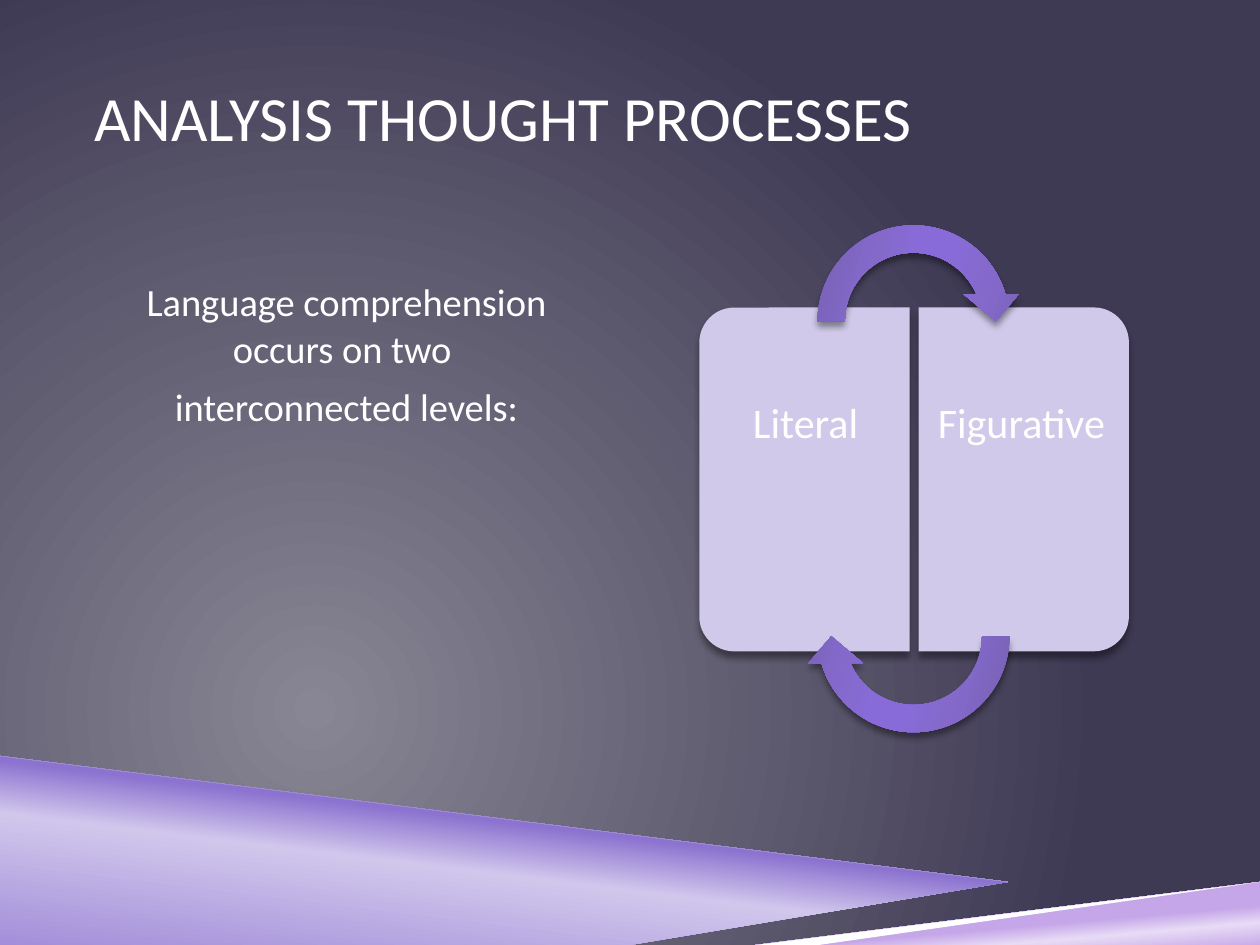
"""Build the slide on literal and figurative levels of language comprehension."""
from dataclasses import dataclass
from typing import Any

import pptx
import pptx.dml.color
import pptx.enum.shapes
import pptx.enum.text
import pptx.oxml
import pptx.oxml.ns
import pptx.util
from lxml import etree

Inches = pptx.util.Inches
Pt = pptx.util.Pt
RGBColor = pptx.dml.color.RGBColor
Shapes = pptx.enum.shapes.MSO_SHAPE
Align = pptx.enum.text.PP_ALIGN
Anchor = pptx.enum.text.MSO_ANCHOR
qn = pptx.oxml.ns.qn

WHITE = RGBColor(0xFF, 0xFF, 0xFF)
BLACK = RGBColor(0x00, 0x00, 0x00)
LAVENDER = RGBColor(0xD0, 0xC9, 0xE9)
GREY = RGBColor(0x88, 0x86, 0x94)
NIGHT = RGBColor(0x3F, 0x3A, 0x54)
ORCHID = RGBColor(0xC5, 0xA6, 0xE8)
PALE_ORCHID = RGBColor(0xE8, 0xDB, 0xF6)
VIOLET = RGBColor(0x8C, 0x73, 0xD0)
PALE_VIOLET = RGBColor(0xD1, 0xC7, 0xEC)
ARROW_DARK = RGBColor(0x73, 0x5E, 0xAA)
ARROW_MID = RGBColor(0x84, 0x69, 0xCB)
ARROW_LIGHT = RGBColor(0x88, 0x6B, 0xD8)

Stops = tuple[tuple[int, RGBColor], ...]
Points = tuple[tuple[float, float], ...]

ARROW_STOPS: Stops = (
    (0, ARROW_DARK), (30, ARROW_MID), (45, ARROW_LIGHT),
    (55, ARROW_LIGHT), (73, ARROW_MID), (100, ARROW_DARK),
)
ARROW_ADJUSTMENTS = (0.125, 11.42, 204.58, 108, 0.125)
PANEL_ADJUSTMENTS = (0.167, 0)


@dataclass(frozen=True)
class Band:
    points: Points
    stops: Stops = ()
    angle: int = 0


@dataclass(frozen=True)
class Panel:
    label: str
    left: float
    rotation: int
    label_left: float
    insets: tuple[float, float]


@dataclass(frozen=True)
class Arrow:
    top: float
    rotation: int


BANDS = (
    Band(((1.98, 7.5), (10, 6.72), (10, 7.5)),
         ((28, ORCHID), (40, PALE_ORCHID), (48, ORCHID)), 265),
    Band(((0, 5.97), (7.92, 6.92), (2, 7.5), (0, 7.5)),
         ((0, VIOLET), (52, PALE_VIOLET), (66, VIOLET)), 277),
    Band(((0, 5.92), (0, 6), (7.9, 6.93), (8.32, 6.9))),
    Band(((10, 6.69), (1.84, 7.5), (2.66, 7.5), (10, 6.77))),
)
PANELS = (
    Panel("Literal", 5.02, 270, 5.63, (0.1, 0.15)),
    Panel("Figurative", 6.76, 90, 7.29, (0.15, 0.1)),
)
ARROWS = (Arrow(1.68, 0), Arrow(4.18, 180))


def apply_format(target: Any, values: dict[str, Any]) -> None:
    for name, value in values.items():
        setattr(target, name, value)


def add_element(parent: Any, tag: str, **attributes: Any) -> Any:
    texts = {name: str(value) for name, value in attributes.items()}
    return etree.SubElement(parent, qn(tag), texts)


def paint_gradient(fill: Any, owner: Any, stops: Stops, angle: int | None = None) -> None:
    fill.gradient()
    gradient = owner.find(".//" + qn("a:gradFill"))
    gradient.clear()
    gradient.set("rotWithShape", "1")
    stop_list = add_element(gradient, "a:gsLst")
    for position, color in stops:
        stop = add_element(stop_list, "a:gs", pos=position * 1000)
        add_element(stop, "a:srgbClr", val=color)
    if angle is None:
        circle = add_element(gradient, "a:path", path="circle")
        add_element(circle, "a:fillToRect", l=50000, t=100000, r=100000, b=50000)
    else:
        add_element(gradient, "a:lin", ang=angle * 60000, scaled=0)


def paint_solid(shape: Any, color: RGBColor) -> None:
    shape.fill.solid()
    shape.fill.fore_color.rgb = color


def add_shadow(shape: Any) -> None:
    effects = shape._element.spPr.find(qn("a:effectLst"))
    shadow = add_element(effects, "a:outerShdw", blurRad=Pt(4), dist=Pt(3.3),
                         dir=90 * 60000, rotWithShape=0)
    color = add_element(shadow, "a:srgbClr", val=BLACK)
    add_element(color, "a:alpha", val=40000)


def place(box: Any, left: float, top: float, width: float, height: float) -> None:
    apply_format(box, {"left": Inches(left), "top": Inches(top),
                       "width": Inches(width), "height": Inches(height)})


def write_text(box: Any, lines: tuple[str, ...], size: int,
               insets: tuple[float, float, float, float],
               anchor: Any, paragraph_format: dict[str, Any], gap: float = 0) -> None:
    frame = box.text_frame
    left, top, right, bottom = insets
    apply_format(frame, {
        "word_wrap": True, "auto_size": pptx.enum.text.MSO_AUTO_SIZE.NONE,
        "vertical_anchor": anchor,
        "margin_left": Inches(left), "margin_top": Inches(top),
        "margin_right": Inches(right), "margin_bottom": Inches(bottom),
    })
    for index, line in enumerate(lines):
        para = frame.add_paragraph() if index else frame.paragraphs[0]
        properties = para._p.get_or_add_pPr()
        apply_format(para, {"space_before": Pt(gap if index else 0), **paragraph_format})
        properties.set("marL", "0")
        properties.set("indent", "0")
        add_element(properties, "a:buNone")
        span = para.add_run()
        span.text = line
        apply_format(span.font, {"name": "Calibri", "size": Pt(size)})
        span.font.color.rgb = WHITE


def draw_band(page: Any, band: Band) -> None:
    builder = page.shapes.build_freeform(*band.points[0], scale=Inches(1))
    builder.add_line_segments(band.points[1:], close=True)
    shape = builder.convert_to_shape()
    shape.shadow.inherit = False
    shape.line.fill.background()
    if band.stops:
        paint_gradient(shape.fill, shape._element, band.stops, band.angle)
    else:
        paint_solid(shape, WHITE)


def draw_preset(group: Any, kind: Any, left: float, top: float, width: float,
                height: float, rotation: int, adjustments: tuple[float, ...]) -> Any:
    shape = group.shapes.add_shape(
        kind, Inches(left), Inches(top), Inches(width), Inches(height))
    shape.rotation = rotation
    for index, value in enumerate(adjustments):
        shape.adjustments[index] = value
    shape.line.fill.background()
    shape.shadow.inherit = False
    add_shadow(shape)
    return shape


def draw_panel(group: Any, panel: Panel) -> None:
    shape = draw_preset(group, Shapes.ROUND_2_SAME_RECTANGLE, panel.left, 2.97,
                        2.73, 1.67, panel.rotation, PANEL_ADJUSTMENTS)
    paint_solid(shape, LAVENDER)
    label = group.shapes.add_textbox(
        Inches(panel.label_left), Inches(2.52), Inches(1.58), Inches(2.56))
    left, right = panel.insets
    write_text(label, (panel.label,), 24, (left, 0.67, right, 0.17), Anchor.TOP,
               {"alignment": Align.CENTER, "line_spacing": 0.9})


def draw_arrow(group: Any, arrow: Arrow) -> None:
    shape = draw_preset(group, Shapes.CIRCULAR_ARROW, 6.38, arrow.top, 1.74, 1.74,
                        arrow.rotation, ARROW_ADJUSTMENTS)
    paint_gradient(shape.fill, shape._element, ARROW_STOPS, 16)


def main() -> None:
    deck = pptx.Presentation()
    apply_format(deck, {"slide_width": Inches(10), "slide_height": Inches(7.5)})
    page = deck.slides.add_slide(deck.slide_layouts[1])
    paint_gradient(page.background.fill, page._element, ((0, GREY), (100, NIGHT)))
    for band in BANDS:
        draw_band(page, band)
    title, body = page.shapes.title, page.placeholders[1]
    place(title, 0.75, 0.3, 8.5, 1.25)
    write_text(title, ("ANALYSIS THOUGHT PROCESSES",), 36, (0, 0.05, 0, 0.05),
               Anchor.MIDDLE, {"alignment": Align.LEFT})
    place(body, 0.75, 1.68, 4, 4.24)
    write_text(body, ("Language comprehension occurs on two ", "interconnected levels:"),
               22, (0, 0.53, 0, 0.05), Anchor.TOP, {"alignment": Align.CENTER}, gap=7)
    diagram = page.shapes.add_group_shape()
    for panel in PANELS:
        draw_panel(diagram, panel)
    for arrow in ARROWS:
        draw_arrow(diagram, arrow)
    deck.save("out.pptx")


if __name__ == "__main__":
    main()
